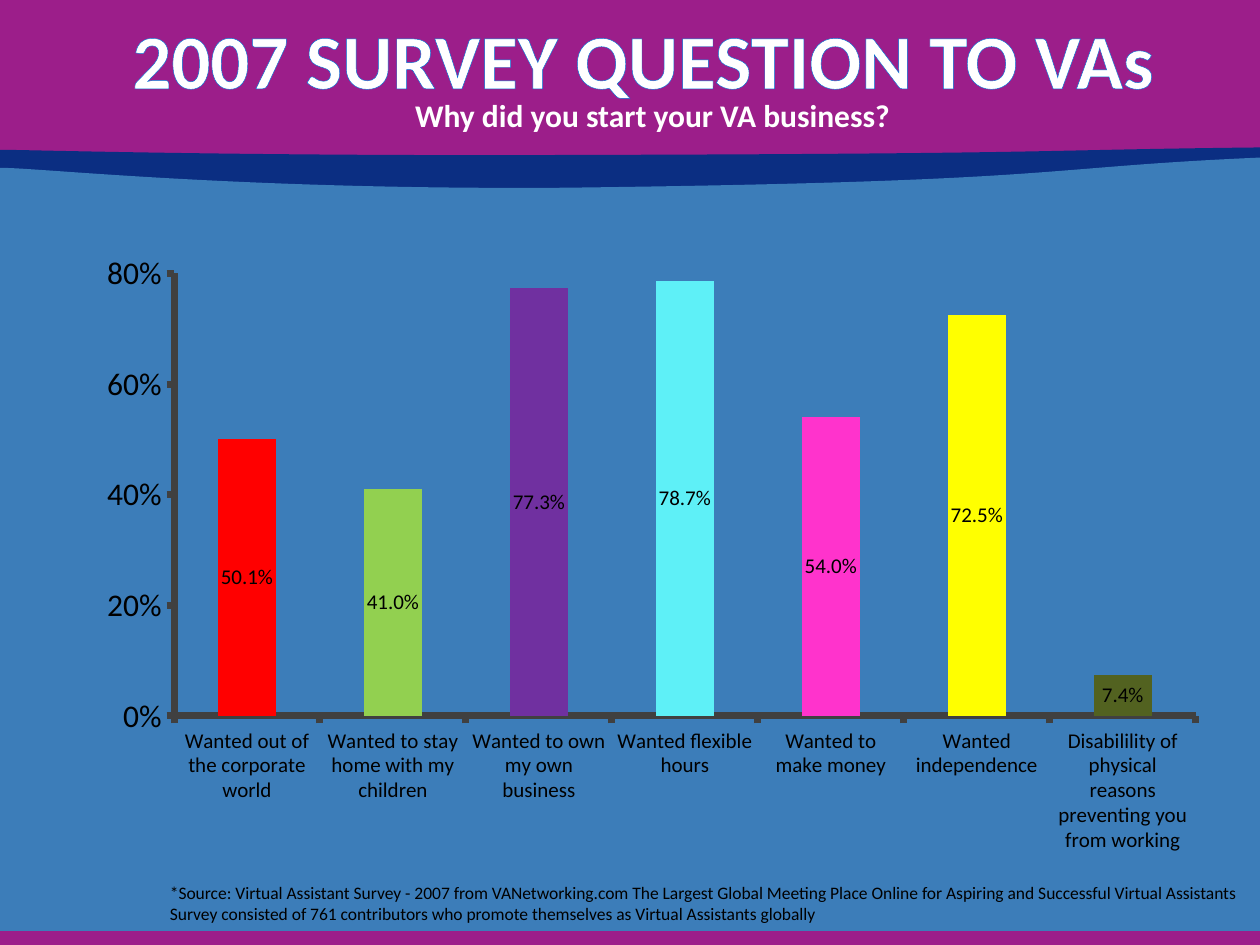
from dataclasses import dataclass

from lxml import etree
from pptx import Presentation
from pptx.chart.data import CategoryChartData
from pptx.dml.color import RGBColor
from pptx.enum.chart import XL_CHART_TYPE as CHART, XL_LABEL_POSITION as LABEL, XL_TICK_MARK as TICK
from pptx.enum.shapes import MSO_SHAPE as SHAPE
from pptx.enum.text import MSO_ANCHOR as ANCHOR, PP_ALIGN as ALIGN
from pptx.oxml import parse_xml
from pptx.oxml.ns import nsdecls, qn
from pptx.util import Pt

PX = 9144  # EMU per px, 100 px to the inch


@dataclass(frozen=True)
class Theme:
    font: str = "Calibri"
    magenta: str = "9C1E8A"
    navy: str = "0B2E82"
    blue: str = "3C7DB9"
    white: str = "FFFFFF"
    black: str = "000000"
    axis: str = "404040"
    outline: str = "0070D5"
    title: int = 44
    large: int = 18
    label: int = 12
    note: int = 10
    axis_width: int = 4


def rgb(value):
    return RGBColor.from_string(value)


class Deck:
    def __init__(self, theme):
        self.theme = theme
        self.prs = Presentation()
        self.prs.slide_width, self.prs.slide_height = 1000 * PX, 750 * PX
        self.s = self.prs.slides.add_slide(self.prs.slide_layouts[6])

    def paint(self, sp, color):
        sp.shadow.inherit = False
        sp.fill.solid()
        sp.fill.fore_color.rgb = rgb(color)
        sp.line.fill.background()

    def band(self, x, y, w, h, color):
        sp = self.s.shapes.add_shape(SHAPE.RECTANGLE, x * PX, y * PX, w * PX, h * PX)
        self.paint(sp, color)

    def wave(self, start, curves, bottom, color):
        """Area from a curved top edge down to a straight bottom."""
        ends = [curve[-1] for curve in curves]
        corners = ends + [(ends[-1][0], bottom), (start[0], bottom)]
        fb = self.s.shapes.build_freeform(start[0] * PX, start[1] * PX, scale=1.0)
        fb.add_line_segments([(x * PX, y * PX) for x, y in corners])
        sp = fb.convert_to_shape()
        self.paint(sp, color)
        # Bend the first segments into cubic curves
        segments = list(sp._element.iter(qn("a:lnTo")))
        for segment, curve in zip(segments, curves):
            bend = etree.Element(qn("a:cubicBezTo"))
            for x, y in curve:
                etree.SubElement(bend, qn("a:pt"), x=str(x * PX - sp.left), y=str(y * PX - sp.top))
            segment.getparent().replace(segment, bend)

    def font(self, font, size, color, bold=False):
        font.name, font.size, font.bold = self.theme.font, Pt(size), bold
        font.color.rgb = rgb(color)

    def text(self, x, y, w, h, lines, size, color, bold=False, align=ALIGN.LEFT,
             anchor=ANCHOR.TOP, outline=None):
        tf = self.s.shapes.add_textbox(x * PX, y * PX, w * PX, h * PX).text_frame
        tf.word_wrap, tf.vertical_anchor = True, anchor
        for i, line in enumerate(lines):
            p = tf.add_paragraph() if i else tf.paragraphs[0]
            p.alignment = align
            r = p.add_run()
            r.text = line
            self.font(r.font, size, color, bold)
            if outline:
                r._r.get_or_add_rPr().insert(0, parse_xml(
                    f'<a:ln {nsdecls("a")} w="{Pt(1)}"><a:solidFill>'
                    f'<a:srgbClr val="{outline}"/></a:solidFill></a:ln>'))

    def style_axis(self, axis, size):
        axis.has_major_gridlines = False
        axis.major_tick_mark, axis.minor_tick_mark = TICK.OUTSIDE, TICK.NONE
        axis.format.line.color.rgb = rgb(self.theme.axis)
        axis.format.line.width = Pt(self.theme.axis_width)
        self.font(axis.tick_labels.font, size, self.theme.black)

    def chart(self, x, y, w, h, bars):
        th = self.theme
        data = CategoryChartData(number_format="0.0%")
        data.categories = [name for name, _, _ in bars]
        data.add_series("Series 1", [value for _, value, _ in bars])
        chart = self.s.shapes.add_chart(
            CHART.COLUMN_STACKED, x * PX, y * PX, w * PX, h * PX, data).chart
        chart.has_legend = chart.has_title = False
        self.font(chart.font, th.large, th.black)

        # Axes
        self.style_axis(chart.category_axis, th.label)
        axis = chart.value_axis
        self.style_axis(axis, th.large)
        axis.maximum_scale, axis.major_unit = 0.8, 0.2
        axis.tick_labels.number_format = "0%"
        axis.tick_labels.number_format_is_linked = False

        # Bars and their labels
        plot = chart.plots[0]
        plot.gap_width, plot.overlap, plot.vary_by_categories = 150, 100, False
        series = plot.series[0]
        first = bars[0][2]
        series.format.fill.solid()
        series.format.fill.fore_color.rgb = rgb(first)
        for i, (_, _, color) in enumerate(bars):
            if color != first:
                fill = series.points[i].format.fill
                fill.solid()
                fill.fore_color.rgb = rgb(color)
        labels = series.data_labels
        labels.show_value, labels.position = True, LABEL.CENTER
        labels.number_format, labels.number_format_is_linked = "0.0%", False
        self.font(labels.font, th.label, th.black)


BARS = [
    ("Wanted out of the corporate world", 0.501, "FF0000"),
    ("Wanted to stay home with my children", 0.41, "92D050"),
    ("Wanted to own my own business", 0.773, "7030A0"),
    ("Wanted flexible hours", 0.787, "5EF0F7"),
    ("Wanted to make money", 0.54, "FF33CC"),
    ("Wanted independence", 0.725, "FFFF00"),
    ("Disabilility of physical reasons preventing you from working", 0.074, "526220"),
]
SOURCE = [
    "*Source: Virtual Assistant Survey - 2007 from VANetworking.com The Largest Global "
    "Meeting Place Online for Aspiring and Successful Virtual Assistants",
    "Survey consisted of 761 contributors who promote themselves as Virtual Assistants globally",
]


def main():
    th = Theme()
    deck = Deck(th)

    # Background bands and waves
    deck.band(-3, 0, 1004, 175, th.magenta)
    deck.wave((-3, 119), [[(-3, 118), (161, 124), (448, 123)],
                          [(852, 122), (816, 119), (1000, 117)]], 292, th.navy)
    deck.wave((-3, 134), [[(-3, 129), (161, 151), (449, 149)],
                          [(853, 144), (817, 133), (1001, 125)]], 750, th.blue)
    deck.band(-3, 739, 1004, 17, th.magenta)

    # Survey results
    deck.chart(67, 192, 900, 495, BARS)
    deck.text(125, 695, 875, 44, SOURCE, th.note, th.black)

    # Heading
    deck.text(61, 0, 900, 92, ["2007 SURVEY QUESTION TO VAs"], th.title, th.white, True,
              ALIGN.CENTER, ANCHOR.MIDDLE, th.outline)
    deck.text(172, 71, 692, 40, ["Why did you start your VA business?"], th.large, th.white,
              True, ALIGN.CENTER)

    deck.prs.save("out.pptx")


if __name__ == "__main__":
    main()
